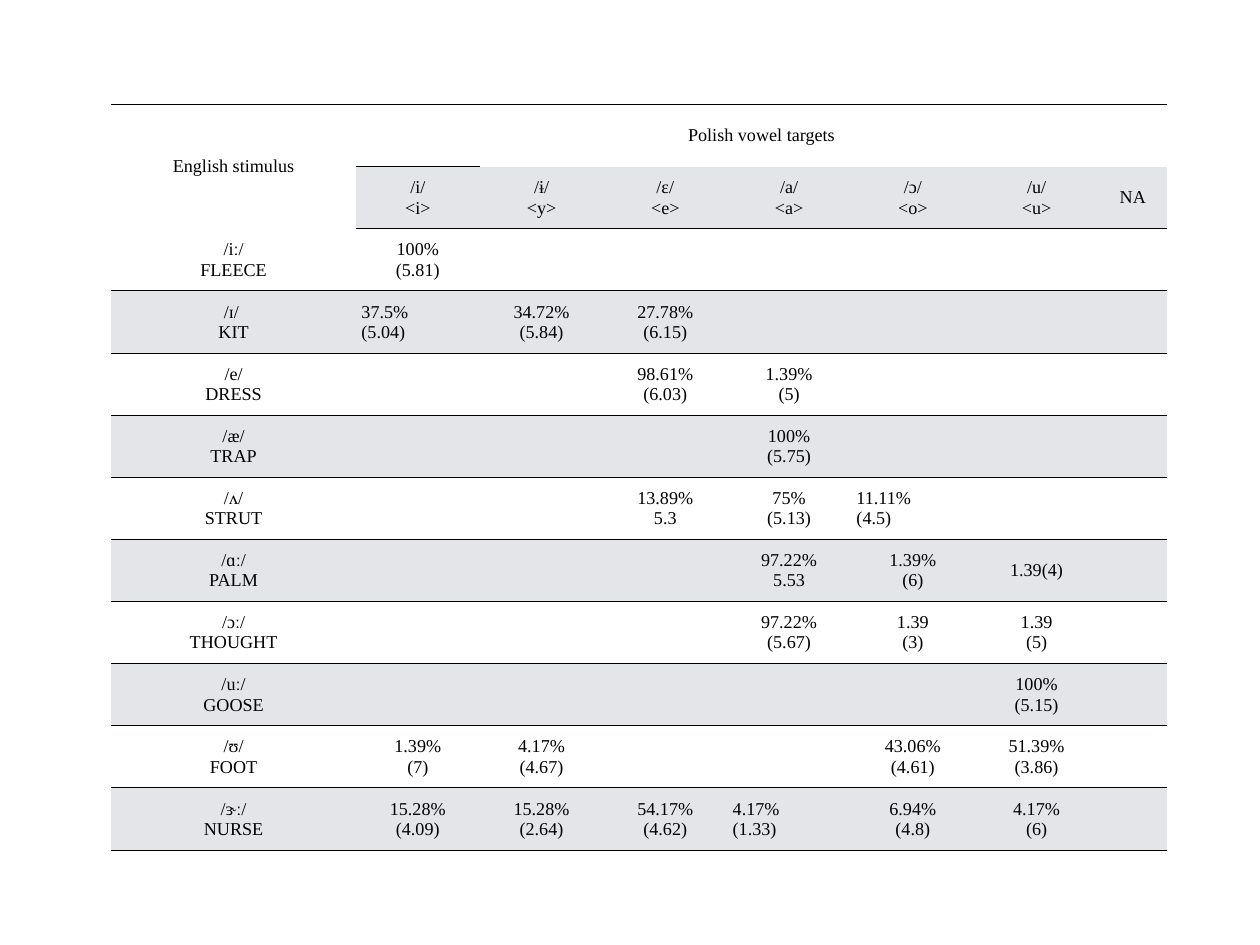
"""Build a slide with a table of English vowels and their Polish targets."""
import pptx
import pptx.dml.color
import pptx.enum.text
import pptx.oxml
import pptx.oxml.ns
import pptx.util

Pt = pptx.util.Pt
WHITE, GREY, BLACK = "FFFFFF", "E3E5E8", "000000"
COLUMN_WIDTHS = [198.9] + [100.6] * 6 + [55.8]
ROW_HEIGHT = 50.5
LEFT_ALIGNED = {(3, 1), (6, 5), (11, 4)}
ROWS = [
    ["English stimulus", "Polish vowel targets", "", "", "", "", "", ""],
    ["", "/i/|<i>", "/ɨ/|<y>", "/ɛ/|<e>", "/a/|<a>", "/ɔ/|<o>", "/u/|<u>", "NA"],
    ["/iː/|FLEECE", "100%|(5.81)", "", "", "", "", "", ""],
    ["/ɪ/ |KIT", "37.5%|(5.04)", "34.72%|(5.84)", "27.78%|(6.15)", "", "", "", ""],
    ["/e/|DRESS", "", "", "98.61%|(6.03)", "1.39%|(5)", "", "", ""],
    ["/æ/|TRAP", "", "", "", "100%|(5.75)", "", "", ""],
    ["/ʌ/|STRUT", "", "", "13.89%|5.3", "75%|(5.13)", "11.11%|(4.5)", "", ""],
    ["/ɑː/|PALM", "", "", "", "97.22%|5.53", "1.39%|(6)", "1.39(4)", ""],
    ["/ɔː/|THOUGHT", "", "", "", "97.22%|(5.67)", "1.39|(3)", "1.39|(5)", ""],
    ["/uː/|GOOSE", "", "", "", "", "", "100%|(5.15)", ""],
    ["/ʊ/|FOOT", "1.39%|(7)", "4.17%|(4.67)", "", "", "43.06%|(4.61)",
     "51.39%|(3.86)", ""],
    ["/ɝː/|NURSE", "15.28%|(4.09)", "15.28%|(2.64)", "54.17%|(4.62)",
     "4.17%|(1.33)", "6.94%|(4.8)", "4.17%|(6)", ""],
]


def color(value):
    """Return the colour for a hex string."""
    return pptx.dml.color.RGBColor.from_string(value)


def border_sides(row, column):
    """Return the sides of a cell that carry a line."""
    if row == 0:
        return "TB" if column == 1 else "T"
    if row == 1:
        return {0: "", 1: "TB"}.get(column, "B")
    return "B" if (row, column) == (2, 0) else "TB"


def set_borders(cell, sides):
    """Draw thin black lines on the given sides and none on the others."""
    properties = cell._tc.get_or_add_tcPr()
    for side in "LRTB":
        fill = "<a:noFill/>"
        if side in sides:
            fill = (f'<a:solidFill><a:srgbClr val="{BLACK}"><a:alpha val="85000"/>'
                    '</a:srgbClr></a:solidFill><a:prstDash val="solid"/>')
        properties.append(pptx.oxml.parse_xml(
            f'<a:ln{side} {pptx.oxml.ns.nsdecls("a")} w="{Pt(1)}">{fill}</a:ln{side}>'))


def set_text(cell, text, alignment):
    """Write the lines of a cell as separate paragraphs."""
    cell.vertical_anchor = pptx.enum.text.MSO_ANCHOR.MIDDLE
    cell.margin_left = cell.margin_right = Pt(4.5)
    cell.margin_top = cell.margin_bottom = Pt(0)
    for index, line in enumerate(text.split("|")):
        frame = cell.text_frame
        paragraph = frame.add_paragraph() if index else frame.paragraphs[0]
        paragraph.alignment = alignment
        run = paragraph.add_run()
        run.text = line
        run.font.name = "Times New Roman"
        run.font.size = Pt(14.7)
        run.font.color.rgb = color(BLACK)


def format_cell(cell, row, column):
    """Give one cell its borders, fill and text."""
    set_borders(cell, border_sides(row, column))
    cell.fill.solid()
    shaded = row % 2 == 1 and (row, column) != (1, 0)
    cell.fill.fore_color.rgb = color(GREY if shaded else WHITE)
    if ROWS[row][column]:
        align = pptx.enum.text.PP_ALIGN
        set_text(cell, ROWS[row][column],
                 align.LEFT if (row, column) in LEFT_ALIGNED else align.CENTER)


def add_vowel_table(slide):
    """Add the table with its merged headings."""
    shape = slide.shapes.add_table(
        len(ROWS), len(COLUMN_WIDTHS), Pt(90.4), Pt(85),
        Pt(sum(COLUMN_WIDTHS)), Pt(ROW_HEIGHT * len(ROWS)))
    table = shape.table
    table.first_row = table.horz_banding = False
    for column, width in zip(table.columns, COLUMN_WIDTHS):
        column.width = Pt(width)
    for row in table.rows:
        row.height = Pt(ROW_HEIGHT)
    table.cell(0, 0).merge(table.cell(1, 0))
    table.cell(0, 1).merge(table.cell(0, 7))
    for row in range(len(ROWS)):
        for column in range(len(COLUMN_WIDTHS)):
            format_cell(table.cell(row, column), row, column)


def main():
    """Build and save the presentation."""
    presentation = pptx.Presentation()
    presentation.slide_width, presentation.slide_height = Pt(1024), Pt(768)
    slide = presentation.slides.add_slide(presentation.slide_layouts[6])
    add_vowel_table(slide)
    presentation.save("out.pptx")


if __name__ == "__main__":
    main()
